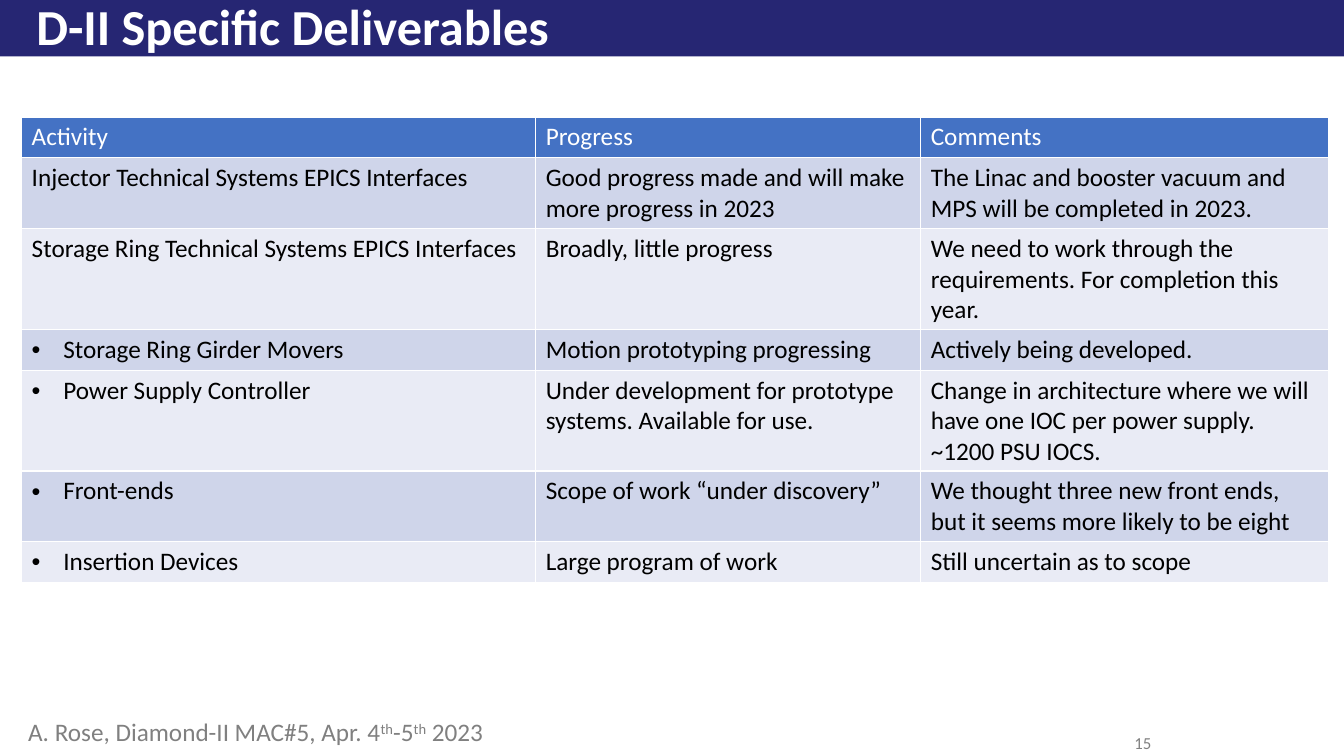
from lxml import etree
from pptx import Presentation
from pptx.dml.color import RGBColor
from pptx.enum.shapes import MSO_SHAPE
from pptx.enum.text import MSO_ANCHOR, MSO_AUTO_SIZE, PP_ALIGN
from pptx.oxml.ns import qn
from pptx.util import Pt

RECTANGLE = MSO_SHAPE.RECTANGLE
MIDDLE = MSO_ANCHOR.MIDDLE
NO_AUTOFIT = MSO_AUTO_SIZE.NONE
LEFT, RIGHT = PP_ALIGN.LEFT, PP_ALIGN.RIGHT

FONT = "Calibri"
NAVY, WHITE, BLACK, GREY = "262673", "FFFFFF", "000000", "808080"
HEADER_FILL = "4472C4"
BAND_FILLS = ("CFD5EA", "E9EBF5")
TITLE_ONLY = 5
BULLET_INDENT = 22.5

COLUMN_WIDTHS = (367.2, 275.04, 291.6)
ROW_HEIGHT = 29.2
BULLETED_ROWS = range(3, 7)
DELIVERABLES = [
    ("Activity", "Progress", "Comments"),
    ("Injector Technical Systems EPICS Interfaces",
     "Good progress made and will make more progress in 2023",
     "The Linac and booster vacuum and MPS will be completed in 2023."),
    ("Storage Ring Technical Systems EPICS Interfaces",
     "Broadly, little progress",
     "We need to work through the requirements. For completion this year."),
    ("Storage Ring Girder Movers",
     "Motion prototyping progressing",
     "Actively being developed."),
    ("Power Supply Controller",
     "Under development for prototype systems. Available for use.",
     "Change in architecture where we will have one IOC per power supply.\n~1200 PSU IOCS."),
    ("Front-ends",
     "Scope of work “under discovery”",
     "We thought three new front ends, but it seems more likely to be eight"),
    ("Insertion Devices", "Large program of work", "Still uncertain as to scope"),
]
FOOTER_SPANS = [
    ("A. Rose, Diamond-II MAC#5, Apr. 4", False),
    ("th", True),
    ("-5", False),
    ("th", True),
    (" 2023", False),
]


def colour(value):
    """Turn a hex string into a colour."""
    return RGBColor.from_string(value)


def set_font(paragraph, size, value, bold=False):
    """Set the font of a whole paragraph."""
    font = paragraph.font
    font.name, font.size, font.bold = FONT, Pt(size), bold
    font.color.rgb = colour(value)


def add_bullet(paragraph):
    """Give a paragraph a hanging round bullet."""
    properties = paragraph._p.get_or_add_pPr()
    properties.set("marL", str(Pt(BULLET_INDENT)))
    properties.set("indent", str(-Pt(BULLET_INDENT)))
    etree.SubElement(properties, qn("a:buFont"), typeface="Arial")
    etree.SubElement(properties, qn("a:buChar"), char="•")


def add_title(page, left, top, width, height):
    """Draw the title band and place the title over it."""
    band = page.shapes.add_shape(RECTANGLE, Pt(left), Pt(top), Pt(width), Pt(height))
    band.shadow.inherit = False
    band.fill.solid()
    band.fill.fore_color.rgb = colour(NAVY)
    band.line.fill.background()
    title = page.shapes.title
    page.shapes._spTree.remove(band._element)
    title._element.addprevious(band._element)
    title.left, title.top = Pt(left + 18.72), Pt(top - 7.92)
    title.width, title.height = Pt(width - 37.44), Pt(56.88)
    frame = title.text_frame
    frame.text = "D-II Specific Deliverables"
    frame.vertical_anchor, frame.auto_size = MIDDLE, NO_AUTOFIT
    paragraph = frame.paragraphs[0]
    paragraph.alignment, paragraph.line_spacing = LEFT, 0.9
    set_font(paragraph, 36, WHITE, bold=True)


def add_deliverables(page, left, top):
    """Add the table of deliverables with banded rows."""
    table = page.shapes.add_table(
        len(DELIVERABLES), len(COLUMN_WIDTHS), Pt(left), Pt(top),
        Pt(sum(COLUMN_WIDTHS)), Pt(ROW_HEIGHT * len(DELIVERABLES))).table
    for column, width in zip(table.columns, COLUMN_WIDTHS):
        column.width = Pt(width)
    for row_index, texts in enumerate(DELIVERABLES):
        table.rows[row_index].height = Pt(ROW_HEIGHT)
        is_header = row_index == 0
        fill = HEADER_FILL if is_header else BAND_FILLS[(row_index - 1) % 2]
        for column_index, text in enumerate(texts):
            cell = table.cell(row_index, column_index)
            cell.fill.solid()
            cell.fill.fore_color.rgb = colour(fill)
            cell.text = text
            if column_index == 0 and row_index in BULLETED_ROWS:
                add_bullet(cell.text_frame.paragraphs[0])
            for paragraph in cell.text_frame.paragraphs:
                set_font(paragraph, 18, WHITE if is_header else BLACK)


def add_label(page, left, top, width, height, spans, size, alignment=LEFT):
    """Add a grey one-line label made of normal and superscript spans."""
    box = page.shapes.add_textbox(Pt(left), Pt(top), Pt(width), Pt(height))
    frame = box.text_frame
    frame.word_wrap, frame.vertical_anchor = True, MIDDLE
    paragraph = frame.paragraphs[0]
    paragraph.alignment = alignment
    set_font(paragraph, size, GREY)
    for text, is_superscript in spans:
        span = paragraph.add_run()
        span.text = text
        if is_superscript:
            span.font._element.set("baseline", "30000")


def main():
    """Build and save the deck."""
    deck = Presentation()
    deck.slide_width, deck.slide_height = Pt(960), Pt(540)
    page = deck.slides.add_slide(deck.slide_layouts[TITLE_ONLY])
    add_title(page, 0, 0, 960, 40.32)
    add_label(page, 763.2, 515.52, 66.24, 30.24, [("15", False)], 12, RIGHT)
    add_deliverables(page, 15.48, 83.52)
    add_label(page, 12.96, 507.6, 646.56, 30.24, FOOTER_SPANS, 18)
    deck.save("out.pptx")


if __name__ == "__main__":
    main()
